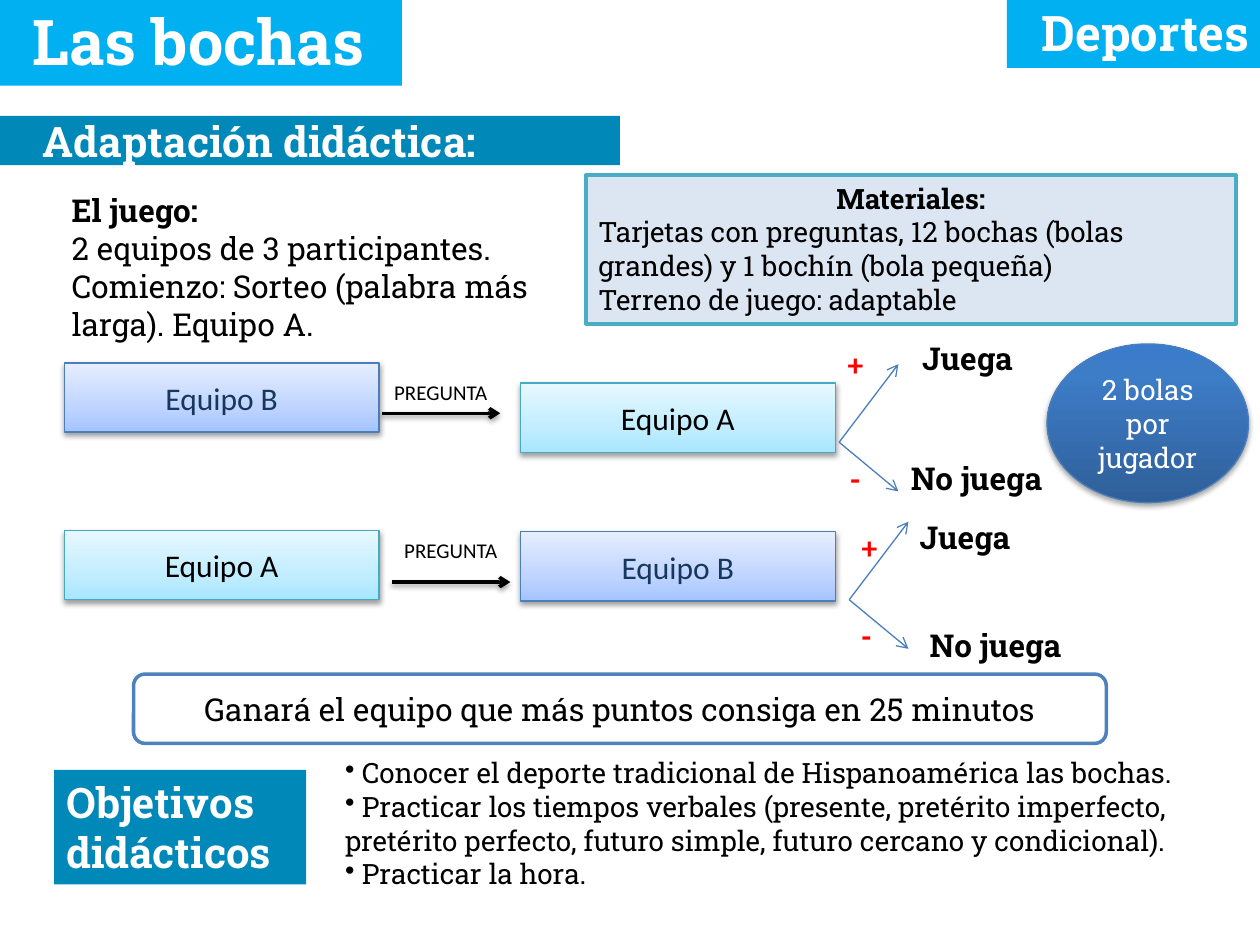
from dataclasses import dataclass
from typing import Optional

from lxml import etree
from pptx import Presentation
from pptx.dml.color import RGBColor
from pptx.enum import shapes, text
from pptx.oxml.ns import qn
from pptx.util import Emu, Inches, Pt

SLAB, CALIBRI = "Roboto Slab", "Calibri"
BLACK = RGBColor(0, 0, 0)
WHITE = RGBColor(0xFF, 0xFF, 0xFF)
RED = RGBColor(0xFF, 0, 0)
NAVY = RGBColor(0x17, 0x37, 0x5E)
SKY = RGBColor(0x00, 0xB0, 0xF0)
TEAL = RGBColor(0x00, 0x88, 0xB8)
PALE = RGBColor(0xDC, 0xE6, 0xF2)
AQUA = RGBColor(0x4B, 0xAC, 0xC6)
AQUA_EDGE = RGBColor(0x46, 0xAA, 0xC5)
BLUE = RGBColor(0x4F, 0x81, 0xBD)
BLUE_EDGE = RGBColor(0x4B, 0x7E, 0xBC)

LEFT, CENTER, RIGHT = text.PP_ALIGN.LEFT, text.PP_ALIGN.CENTER, text.PP_ALIGN.RIGHT
TOP, MIDDLE = text.MSO_ANCHOR.TOP, text.MSO_ANCHOR.MIDDLE
RECT, OVAL = shapes.MSO_SHAPE.RECTANGLE, shapes.MSO_SHAPE.OVAL
ROUND = shapes.MSO_SHAPE.ROUNDED_RECTANGLE


@dataclass
class Line:
    """One paragraph."""
    words: str
    size: float = 18
    color: RGBColor = BLACK
    bold: bool = False
    font: str = SLAB
    align: Optional[text.PP_ALIGN] = LEFT


@dataclass
class Look:
    """Fill (one colour or gradient stops), outline and shadow strength."""
    fill: object
    edge: Optional[RGBColor] = None
    width: float = 0.75
    shadow: int = 0


@dataclass
class Turn:
    """One round: the asking team, the answering team and the outcomes."""
    asker: str
    asker_at: tuple
    answerer: str
    answerer_at: tuple
    label_at: tuple
    arrow_at: tuple
    fork_at: tuple
    plus_at: tuple
    minus_at: tuple
    play_at: tuple
    skip_at: tuple


TEAMS = {
    "Equipo A": (Look([(0, "A7E6FF"), (35, "C1EDFF"), (100, "E7F8FF")], AQUA_EDGE, shadow=38), BLACK),
    "Equipo B": (Look([(0, "A4C4FF"), (35, "BFD4FF"), (100, "E6EEFF")], BLUE_EDGE, shadow=38), NAVY),
}
TURNS = [
    Turn("Equipo B", (0.51, 2.88), "Equipo A", (4.13, 3.04), (3.03, 2.96), (3.03, 3.28),
         (6.66, 3.51), (6.63, 2.69), (6.65, 3.59), (7.22, 2.64), (7.13, 3.59)),
    Turn("Equipo A", (0.51, 4.21), "Equipo B", (4.13, 4.22), (3.11, 4.22), (3.11, 4.62),
         (6.74, 4.76), (6.74, 4.14), (6.74, 4.84), (7.2, 4.06), (7.28, 4.92)),
]


def add_shadow(sp, alpha: int) -> None:
    """Add a soft downward shadow, or an empty effect list when alpha is 0."""
    effects = etree.SubElement(sp._element.spPr, qn("a:effectLst"))
    if alpha:
        shadow = etree.SubElement(effects, qn("a:outerShdw"), blurRad=str(Pt(3.1)), dist=str(Pt(1.6)),
                                  dir="5400000", rotWithShape="0")
        color = etree.SubElement(shadow, qn("a:srgbClr"), val="000000")
        etree.SubElement(color, qn("a:alpha"), val=str(alpha * 1000))


def paint(sp, look: Look) -> None:
    if isinstance(look.fill, list):
        sp.fill.gradient()
        sp.fill.gradient_angle = 90
        stops = sp._element.spPr.find(qn("a:gradFill")).find(qn("a:gsLst"))
        for old in list(stops):
            stops.remove(old)
        for pos, value in look.fill:
            stop = etree.SubElement(stops, qn("a:gs"), pos=str(pos * 1000))
            etree.SubElement(stop, qn("a:srgbClr"), val=value)
    else:
        sp.fill.solid()
        sp.fill.fore_color.rgb = look.fill
    if look.edge is None:
        sp.line.fill.background()
    else:
        sp.line.color.rgb = look.edge
        sp.line.width = Pt(look.width)


def write(sp, lines: list, anchor=TOP, wrap: bool = True, grow: bool = False) -> None:
    tf = sp.text_frame
    frame = {"word_wrap": wrap, "vertical_anchor": anchor,
             "auto_size": text.MSO_AUTO_SIZE.SHAPE_TO_FIT_TEXT if grow else text.MSO_AUTO_SIZE.NONE}
    for name, value in frame.items():
        setattr(tf, name, value)
    for i, line in enumerate(lines):
        p = tf.paragraphs[0] if i == 0 else tf.add_paragraph()
        p.alignment = line.align
        r = p.add_run()
        r.text = line.words
        for name, value in {"size": Pt(line.size), "bold": line.bold, "name": line.font}.items():
            setattr(r.font, name, value)
        r.font.color.rgb = line.color


def add_box(s, kind, at: tuple, look: Look, lines: list, **frame):
    sp = s.shapes.add_shape(kind, *map(Inches, at))
    paint(sp, look)
    sp.shadow.inherit = False
    if look.shadow:
        sp._element.spPr.remove(sp._element.spPr.find(qn("a:effectLst")))
        add_shadow(sp, look.shadow)
    write(sp, lines, **frame)
    return sp


def add_text(s, at: tuple, *lines: Line, wrap: bool = True):
    sp = s.shapes.add_textbox(*map(Inches, at))
    write(sp, list(lines), wrap=wrap, grow=True)
    return sp


def add_arrow(s, start: tuple, dx: float, dy: float, color: RGBColor, width: float, shadow: int = 0) -> None:
    x, y = start
    c = s.shapes.add_connector(shapes.MSO_CONNECTOR.STRAIGHT, *map(Inches, (x, y, x + dx, y + dy)))
    c.line.color.rgb = color
    c.line.width = Pt(width)
    etree.SubElement(c.line._get_or_add_ln(), qn("a:tailEnd"), type="arrow")
    add_shadow(c, shadow)


def add_team(s, name: str, at: tuple) -> None:
    look, color = TEAMS[name]
    add_box(s, RECT, (*at, 2.5, 0.55), look, [Line(name, 18, color, font=CALIBRI, align=CENTER)], anchor=MIDDLE)


def add_turn(s, turn: Turn) -> None:
    add_team(s, turn.asker, turn.asker_at)
    add_team(s, turn.answerer, turn.answerer_at)
    add_text(s, (*turn.label_at, 1.02, 0.3), Line("PREGUNTA", 12, font=CALIBRI))
    add_arrow(s, turn.arrow_at, 0.94, 0, BLACK, 2, shadow=38)
    for dy in (-0.62, 0.39):
        add_arrow(s, turn.fork_at, 0.47, dy, BLUE_EDGE, 0.75)
    for sign, at in (("+", turn.plus_at), ("-", turn.minus_at)):
        add_text(s, (*at, 0.33, 0.4), Line(sign, 18, RED, True, CALIBRI))
    for outcome, at in (("Juega", turn.play_at), ("No juega", turn.skip_at)):
        add_text(s, (*at, 1.95, 0.4), Line(outcome, bold=True))


def main() -> None:
    prs = Presentation()
    prs.slide_width, prs.slide_height = Inches(10), Inches(7.5)
    s = prs.slides.add_slide(prs.slide_layouts[5])

    # Section title
    title = s.shapes.title
    for name, value in {"left": 0, "top": 0.92, "width": 4.92, "height": 0.39}.items():
        setattr(title, name, Inches(value))
    paint(title, Look(TEAL))
    title.text_frame.margin_left = Inches(0.34)
    write(title, [Line("Adaptación didáctica:", 24, WHITE, True)], anchor=MIDDLE)

    # Top banners
    add_box(s, RECT, (-0.04, -0.03, 3.23, 0.71), Look(SKY),
            [Line("Las bochas", 36, WHITE, True, align=CENTER)], grow=True)
    add_box(s, RECT, (7.99, -0.03, 2.02, 0.57), Look(SKY),
            [Line("Deportes", 28, WHITE, True, align=RIGHT)], grow=True)

    # Game and materials
    add_text(s, (0.47, 1.47, 4.14, 1.31), Line("El juego:", bold=True), Line("2 equipos de 3 participantes."),
             Line("Comienzo: Sorteo (palabra más larga). Equipo A."))
    add_box(s, RECT, (4.65, 1.39, 5.16, 1.18), Look(PALE, AQUA, 2), [
        Line("Materiales:", 16, bold=True, align=CENTER),
        Line("Tarjetas con preguntas, 12 bochas (bolas grandes) y 1 bochín (bola pequeña)", 16),
        Line("Terreno de juego: adaptable", 16)], grow=True)

    # Turns of play
    for turn in TURNS:
        add_turn(s, turn)
    add_box(s, OVAL, (8.31, 2.73, 1.6, 1.26),
            Look([(0, "2F5F99"), (80, "3D7CC7"), (100, "3A7CCB")], BLUE_EDGE, shadow=35),
            [Line("2 bolas por jugador", 16, WHITE, align=CENTER)], anchor=MIDDLE)
    add_box(s, ROUND, (1.06, 5.35, 7.72, 0.55), Look(WHITE, BLUE, 2),
            [Line("Ganará el equipo que más puntos consiga en 25 minutos", align=CENTER)], anchor=MIDDLE)

    # Learning goals
    add_box(s, RECT, (0.43, 6.11, 2, 0.91), Look(TEAL),
            [Line(word, 24, WHITE, True) for word in ("Objetivos", "didácticos")], wrap=False, grow=True)
    goals = add_text(
        s, (2.64, 5.95, 7.17, 1.21),
        Line(" Conocer el deporte tradicional de Hispanoamérica las bochas.", 16),
        Line(" Practicar los tiempos verbales (presente, pretérito imperfecto, pretérito perfecto, "
             "futuro simple, futuro cercano y condicional).", 16),
        Line(" Practicar la hora.", 16))
    for p in goals.text_frame.paragraphs:
        etree.SubElement(p._p.get_or_add_pPr(), qn("a:buChar"), char="•")

    prs.save("out.pptx")


if __name__ == "__main__":
    main()
